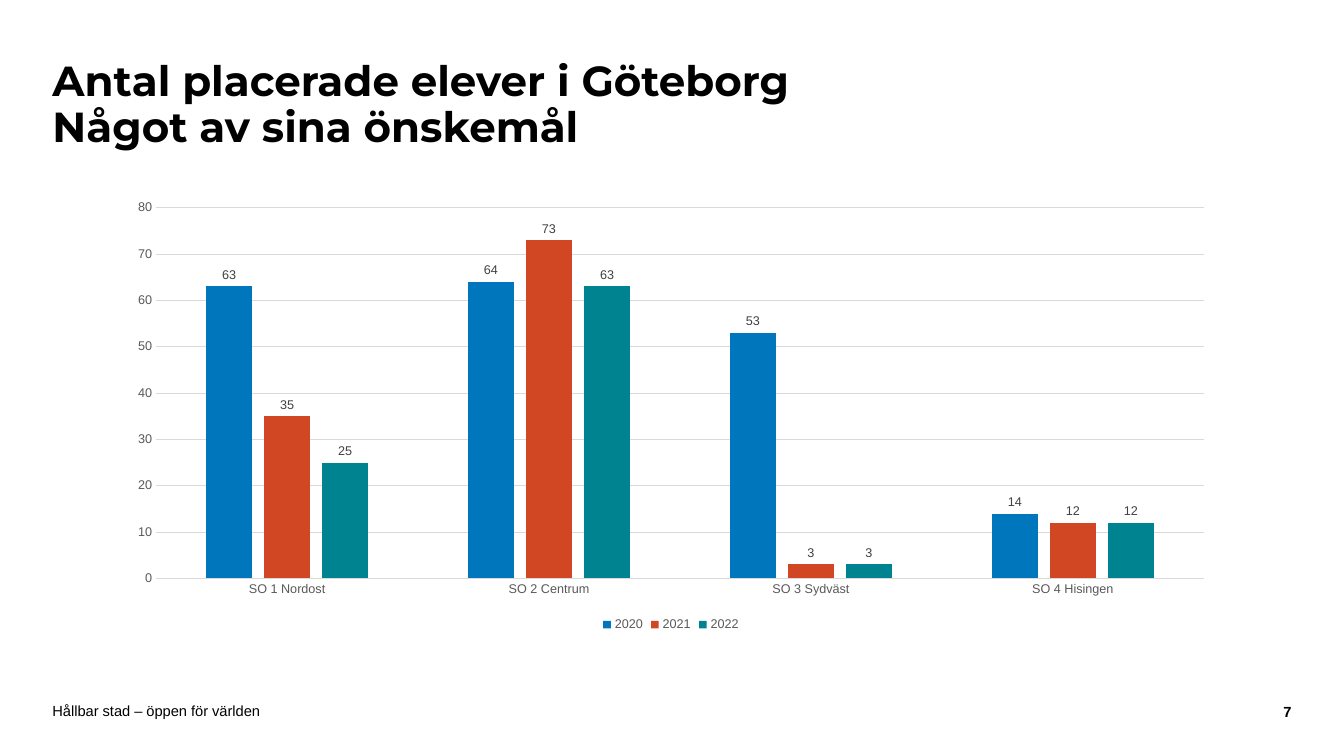
"""Build a slide with a column chart of placed pupils in Göteborg by area and year."""
from pptx import Presentation
from pptx.chart.data import CategoryChartData
from pptx.dml.color import RGBColor
from pptx.enum import chart as ch, text as t
from pptx.util import Inches, Pt

HEADING = ["Antal placerade elever i Göteborg", "Något av sina önskemål"]
SLOGAN = ["Hållbar stad – öppen för världen"]
PAGE = ["7"]
AREAS = ["SO 1 Nordost", "SO 2 Centrum", "SO 3 Sydväst", "SO 4 Hisingen"]
PUPILS = {
    "2020": (63, 64, 53, 14),
    "2021": (35, 73, 3, 12),
    "2022": (25, 63, 3, 12),
}
COLORS = {
    "2020": "0077BC", "2021": "D24723", "2022": "008391",
    "text": "000000", "axis": "595959", "value": "404040", "grid": "D9D9D9",
}


def rgb(name):
    """Return the named colour."""
    return RGBColor.from_string(COLORS[name])


def style_font(font, size, color="text", name="Arial", bold=False):
    """Format a font."""
    font.size, font.name, font.bold = Pt(size), name, bold
    font.color.rgb = rgb(color)


def write(box, lines, size, align=t.PP_ALIGN.LEFT, pad=0, spacing=1.0, **font):
    """Write lines into a box as one formatted paragraph."""
    frame = box.text_frame
    frame.word_wrap = True
    frame.auto_size = t.MSO_AUTO_SIZE.NONE
    frame.vertical_anchor = t.MSO_ANCHOR.MIDDLE
    frame.margin_left = frame.margin_right = 0
    frame.margin_top = frame.margin_bottom = Inches(pad)
    paragraph = frame.paragraphs[0]
    paragraph.text = "\v".join(lines)
    paragraph.alignment, paragraph.line_spacing = align, spacing
    for run in paragraph.runs:
        style_font(run.font, size, **font)


def add_pupil_chart(slide):
    """Add the clustered columns with their axes, legend and labels."""
    data = CategoryChartData()
    data.categories = AREAS
    for year, counts in PUPILS.items():
        data.add_series(year, counts)
    chart = slide.shapes.add_chart(
        ch.XL_CHART_TYPE.COLUMN_CLUSTERED,
        Inches(1.15), Inches(1.9), Inches(11.01), Inches(4.41), data).chart
    style_font(chart.font, 10)
    chart.has_title = False
    chart.has_legend = True
    chart.legend.position = ch.XL_LEGEND_POSITION.BOTTOM
    chart.legend.include_in_layout = False
    style_font(chart.legend.font, 9, "axis")

    areas, counts = chart.category_axis, chart.value_axis
    for axis in (areas, counts):
        axis.major_tick_mark = axis.minor_tick_mark = ch.XL_TICK_MARK.NONE
        style_font(axis.tick_labels.font, 9, "axis")
    counts.minimum_scale, counts.maximum_scale, counts.major_unit = 0, 80, 10
    counts.has_major_gridlines = True
    counts.format.line.fill.background()
    for line in (areas.format.line, counts.major_gridlines.format.line):
        line.color.rgb = rgb("grid")
        line.width = Pt(0.75)

    plot = chart.plots[0]
    plot.gap_width, plot.overlap, plot.vary_by_categories = 219, -27, False
    for series in plot.series:
        series.format.fill.solid()
        series.format.fill.fore_color.rgb = rgb(series.name)
        series.invert_if_negative = False
        labels = series.data_labels
        labels.show_value = True
        labels.position = ch.XL_LABEL_POSITION.OUTSIDE_END
        style_font(labels.font, 9, "value")


def main():
    """Compose and save the slide."""
    deck = Presentation()
    deck.slide_width, deck.slide_height = Inches(13.33), Inches(7.5)
    slide = deck.slides.add_slide(deck.slide_layouts[5])

    title = slide.shapes.title
    title.left, title.top = Inches(0.52), Inches(0.42)
    title.width, title.height = Inches(10.03), Inches(1.26)
    write(title, HEADING, 30, pad=0.05, spacing=0.9, name="Montserrat", bold=True)

    add_pupil_chart(slide)

    slogan = slide.shapes.add_textbox(Inches(0.52), Inches(6.97), Inches(9.45), Inches(0.16))
    write(slogan, SLOGAN, 10.5)
    page = slide.shapes.add_textbox(Inches(12.17), Inches(6.98), Inches(0.64), Inches(0.16))
    write(page, PAGE, 10.5, align=t.PP_ALIGN.RIGHT, bold=True)

    deck.save("out.pptx")


if __name__ == "__main__":
    main()
